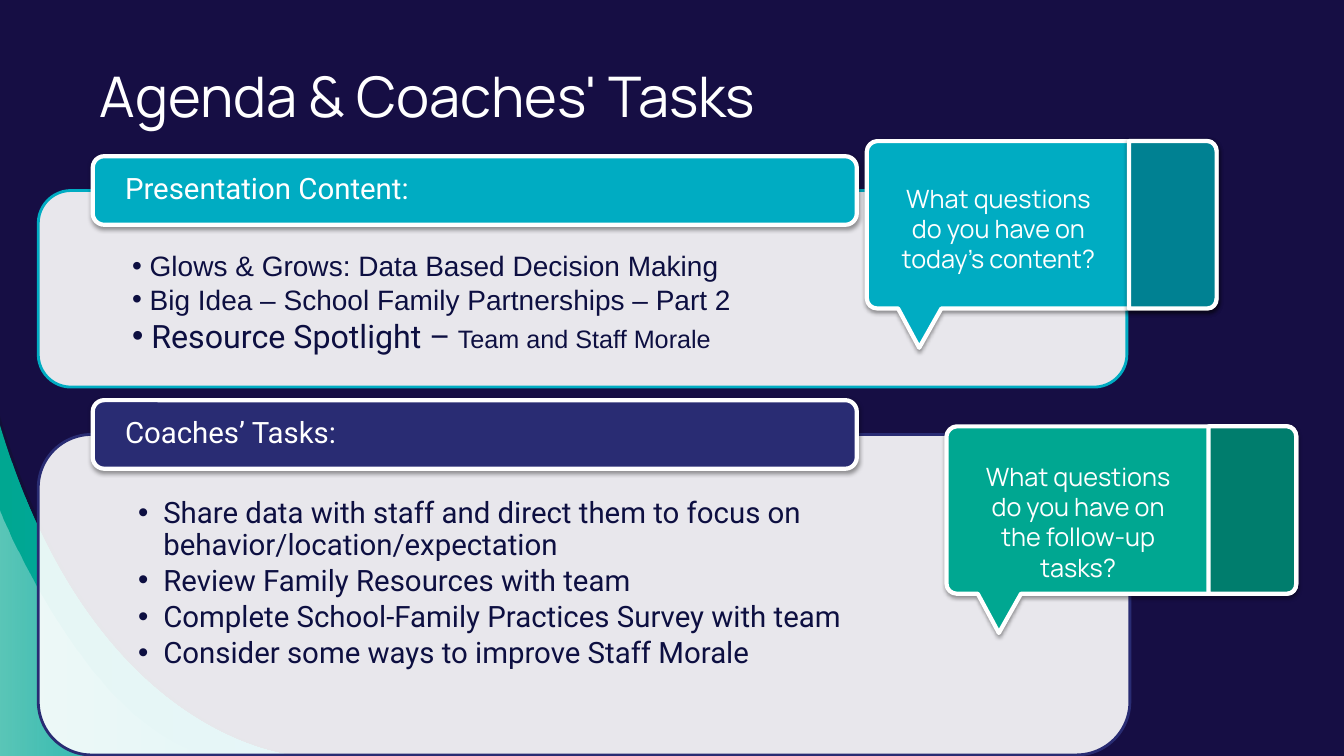
from lxml import etree
from pptx import Presentation
from pptx import util as u
from pptx.dml.color import RGBColor
from pptx.enum import shapes, text
from pptx.oxml import ns

Inches, Pt = u.Inches, u.Pt

COLORS = {
    "navy": "160E44", "shade": "12102F", "ink": "0D0F41", "white": "FFFFFF",
    "cyan": "00ACC2", "dark cyan": "008192", "green": "00A791",
    "dark green": "007D6D", "indigo": "292C73", "black": "000000",
}


def rgb(name):
    return RGBColor.from_string(COLORS[name])


def add_element(parent, tag, **attributes):
    values = {key: str(value) for key, value in attributes.items()}
    return etree.SubElement(parent, ns.qn(tag), values)


def set_opacity(color_parent, percent):
    for color in color_parent.iter(ns.qn("a:srgbClr")):
        add_element(color, "a:alpha", val=percent * 1000)


def style_shape(shape, fill=None, opacity=None, line=None, width=3, shadow=False):
    shape.shadow.inherit = False
    if fill:
        shape.fill.solid()
        shape.fill.fore_color.rgb = rgb(fill)
    if opacity:
        set_opacity(shape.fill._xPr.find(ns.qn("a:solidFill")), opacity)
    if line:
        shape.line.color.rgb = rgb(line)
        shape.line.width = Pt(width)
    else:
        shape.line.fill.background()
    if shadow:
        effects = shape._element.spPr.find(ns.qn("a:effectLst"))
        outer = add_element(effects, "a:outerShdw", blurRad=Pt(3.1), dist=Pt(1.6),
                            dir=90 * 60000, algn="t", rotWithShape=0)
        color = add_element(outer, "a:srgbClr", val=COLORS["black"])
        add_element(color, "a:alpha", val=38000)


def style_gradient(shape, stops):
    style_shape(shape)
    shape.fill.gradient()
    shape.fill.gradient_angle = 0
    for stop, (position, color, opacity) in zip(shape.fill.gradient_stops, stops):
        stop.position = position
        stop.color.rgb = rgb(color)
        if opacity < 100:
            set_opacity(stop._gs, opacity)


def add_outline(slide, segments, left=0, top=0):
    points = [segment[i:i + 2] for segment in segments for i in range(0, len(segment), 2)]
    corners = [(Inches(left + x), Inches(top + y)) for x, y in points]
    builder = slide.shapes.build_freeform(*corners[0], scale=1.0)
    builder.add_line_segments(corners[1:], close=True)
    shape = builder.convert_to_shape()
    lines = iter(list(shape._element.iter(ns.qn("a:lnTo"))))
    for segment in segments[1:]:
        line = next(lines)
        if len(segment) == 6:
            line.addprevious(curve := etree.Element(ns.qn("a:cubicBezTo")))
            for control in (line, next(lines), next(lines)):
                curve.append(control[0])
                control.getparent().remove(control)
    return shape


def add_text(slide, box, insets=(0.1, 0.05, 0.1, 0.05), middle=False):
    shape = slide.shapes.add_textbox(*map(Inches, box))
    frame = shape.text_frame
    frame.word_wrap = True
    frame.margin_left, frame.margin_top, frame.margin_right, frame.margin_bottom = map(Inches, insets)
    frame.vertical_anchor = text.MSO_ANCHOR.MIDDLE if middle else text.MSO_ANCHOR.TOP
    return frame


def add_run(paragraph, words, size, font, color):
    run = paragraph.add_run()
    run.text = words
    run.font.size = Pt(size)
    run.font.name = font
    run.font.color.rgb = rgb(color)


def add_bullets(frame, items, hanging=0, level=0, spacing=None, after=0):
    for index, runs in enumerate(items):
        paragraph = frame.paragraphs[0] if index == 0 else frame.add_paragraph()
        paragraph.level = level
        paragraph.line_spacing = spacing
        paragraph.space_after = Pt(after)
        properties = paragraph._p.get_or_add_pPr()
        properties.set("marL", str(Inches(hanging)))
        properties.set("indent", str(-Inches(hanging)))
        add_element(properties, "a:buFont", typeface="Arial")
        add_element(properties, "a:buChar", char="•")
        for words, size, font in runs:
            add_run(paragraph, words, size, font, "ink")


def add_rounded(slide, box, **style):
    shape = slide.shapes.add_shape(shapes.MSO_SHAPE.ROUNDED_RECTANGLE, *map(Inches, box))
    style_shape(shape, **style)


def add_section(slide, panel, body, heading_top, heading, color, items, **bullets):
    add_rounded(slide, panel, fill="white", opacity=90, line=color, width=2)
    frame = add_text(slide, body, (0.84, 0.48, 0.84, 0.16))
    add_bullets(frame, items, **bullets)
    add_rounded(slide, (0.92, heading_top, 7.58, 0.68), fill=color, line="white", shadow=True)
    label = add_text(slide, (0.95, heading_top + 0.03, 7.51, 0.61), (0.29, 0, 0.29, 0), True)
    label.paragraphs[0].line_spacing = 0.9
    add_run(label.paragraphs[0], heading, 21, "Roboto", "white")


def add_callout(slide, left, top, color, side_color, side_shadow, question, text_top):
    right_edge = [(3.38, 0), (3.43, 0, 3.47, 0.05, 3.47, 0.1), (3.47, 1.56),
                  (3.47, 1.62, 3.43, 1.66, 3.38, 1.66)]
    bubble = right_edge + [(0.74, 1.66), (0.52, 2.05), (0.31, 1.66), (0.1, 1.66),
                           (0.05, 1.66, 0, 1.62, 0, 1.56), (0, 0.1),
                           (0, 0.05, 0.05, 0, 0.1, 0)]
    side = right_edge + [(2.6, 1.66), (2.6, 0)]
    style_shape(add_outline(slide, bubble, left, top), color, line="white", shadow=True)
    style_shape(add_outline(slide, side, left, top), side_color, line="white",
                shadow=side_shadow)
    frame = add_text(slide, (left + 0.16, text_top, 2.29, 1.31), middle=True)
    frame.paragraphs[0].alignment = text.PP_ALIGN.CENTER
    add_run(frame.paragraphs[0], question, 18, "Manrope", "white")


def add_corner_waves(slide):
    shade = add_outline(slide, [(0, 4.13), (0.98, 7.39, 3.03, 7.5, 3.03, 7.5), (0, 7.5)])
    style_shape(shade, "shade", opacity=54)
    wave = add_outline(slide, [(2.95, 7.5), (2.95, 7.5, 0.95, 7.39, 0, 4.22), (0, 7.5)])
    style_gradient(wave, [(0, "green", 100), (1, "cyan", 100)])
    glow = add_outline(slide, [(0, 5.06), (0, 5.06, 0.91, 7.35, 2.16, 7.5), (0, 7.5)])
    style_gradient(glow, [(0, "white", 36), (1, "white", 0)])


def main():
    presentation = Presentation()
    presentation.slide_width = Inches(40 / 3)
    presentation.slide_height = Inches(7.5)
    slide = presentation.slides.add_slide(presentation.slide_layouts[6])
    slide.background.fill.solid()
    slide.background.fill.fore_color.rgb = rgb("navy")

    add_corner_waves(slide)
    content = [
        [(" Glows & Grows: Data Based Decision Making", 20, "Arial")],
        [(" Big Idea – School Family Partnerships – Part 2", 20, "Arial")],
        [(" Resource Spotlight –", 23, "Roboto"), (" Team and Staff Morale", 18, "Arial")],
    ]
    add_section(slide, (0.38, 1.89, 10.8, 1.95), (0.47, 1.99, 10.61, 1.76), 1.55,
                "Presentation Content:", "cyan", content)
    tasks = [
        "Share data with staff and direct them to focus on behavior/location/expectation",
        "Review Family Resources with team",
        "Complete School-Family Practices Survey with team",
        "Consider some ways to improve Staff Morale",
    ]
    add_section(slide, (0.38, 4.31, 10.83, 3.18), (0.53, 4.46, 10.51, 2.87), 3.97,
                "Coaches’ Tasks:", "indigo", [[(task, 21, "Roboto")] for task in tasks],
                hanging=0.25, level=1, spacing=0.9, after=3.15)

    title = add_text(slide, (0.89, 0.48, 10.26, 0.92), (0.1, 0.1, 0.1, 0.1), True)
    add_run(title.paragraphs[0], "Agenda & Coaches' Tasks", 40, "Manrope", "white")

    add_callout(slide, 8.6, 1.4, "cyan", "dark cyan", True,
                "What questions do you have on today’s content?", 1.61)
    add_callout(slide, 9.39, 4.23, "green", "dark green", False,
                "What questions do you have on the follow-up tasks?", 4.52)
    presentation.save("out.pptx")


if __name__ == "__main__":
    main()
